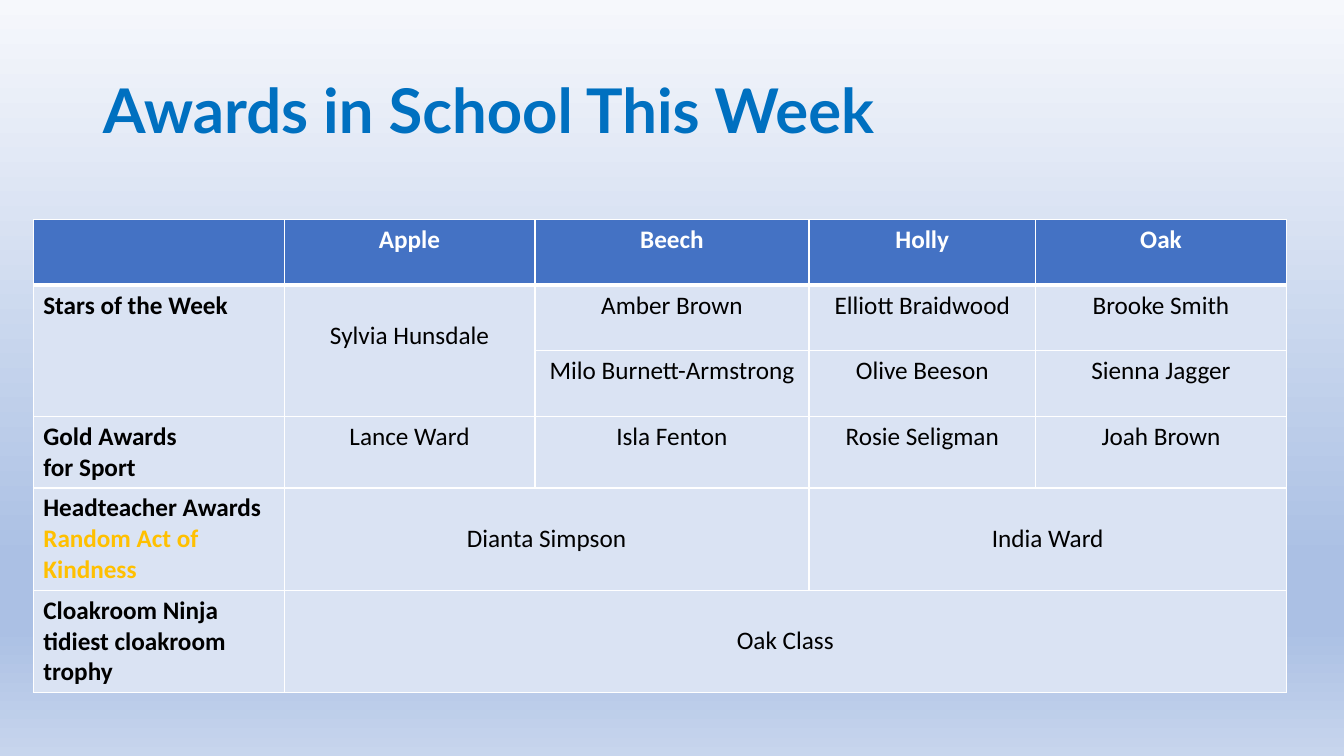
from lxml import etree
from pptx import Presentation
from pptx.dml.color import RGBColor
from pptx.enum.text import MSO_ANCHOR, MSO_AUTO_SIZE, PP_ALIGN
from pptx.oxml.ns import qn
from pptx.util import Inches, Pt

LEFT, CENTER = PP_ALIGN.LEFT, PP_ALIGN.CENTER
MIDDLE, NO_FIT = MSO_ANCHOR.MIDDLE, MSO_AUTO_SIZE.NONE

WHITE = RGBColor(0xFF, 0xFF, 0xFF)
BLACK = RGBColor(0, 0, 0)
TITLE_BLUE = RGBColor(0x00, 0x70, 0xC0)
HEADER_BLUE = RGBColor(0x44, 0x72, 0xC4)
PALE_BLUE = RGBColor(0xDA, 0xE3, 0xF3)
GOLD = RGBColor(0xFF, 0xC0, 0x00)
SKY_PALE = RGBColor(0xF6, 0xF8, 0xFC)
SKY_DEEP = RGBColor(0xAB, 0xC0, 0xE4)
SKY_LOW = RGBColor(0xC7, 0xD5, 0xED)
SKY_STOPS = [(0, SKY_PALE), (74, SKY_DEEP), (83, SKY_DEEP), (100, SKY_LOW)]

COL_WIDTHS = [2.49, 2.49, 2.72, 2.25, 2.49]
ROW_HEIGHT = 0.65
LINE_DROP = 0.35
KINDNESS = "Random Act of Kindness"
AWARDS = [
    ["", "Apple", "Beech", "Holly", "Oak"],
    ["Stars of the Week", "Sylvia Hunsdale", "Amber Brown", "Elliott Braidwood", "Brooke Smith"],
    ["", "", "Milo Burnett-Armstrong", "Olive Beeson", "Sienna Jagger"],
    ["Gold Awards\nfor Sport", "Lance Ward", "Isla Fenton", "Rosie Seligman", "Joah Brown"],
    ["Headteacher Awards ", "Dianta Simpson", "", "India Ward", ""],
    ["Cloakroom Ninja tidiest cloakroom trophy", "Oak Class", "", "", ""],
]
MERGES = [(1, 0, 2, 0), (1, 1, 2, 1), (4, 1, 4, 2), (4, 3, 4, 4), (5, 1, 5, 4)]


def add_solid(parent, color):
    """Append a solid fill of the given colour to an XML element."""
    fill = etree.SubElement(parent, qn("a:solidFill"))
    etree.SubElement(fill, qn("a:srgbClr"), val=str(color))


def style_run(r, font, size, color, bold):
    """Format one run of text."""
    r.font.name, r.font.size, r.font.bold = font, Pt(size), bold
    r.font.color.rgb = color


def paint_background(s):
    """Fill the slide with a vertical gradient."""
    fill = s.background.fill
    fill.gradient()
    fill.gradient_angle = 270
    stops = next(s.background._cSld.iter(qn("a:gsLst")))
    for stop in list(stops):
        stops.remove(stop)
    for share, color in SKY_STOPS:
        stop = etree.SubElement(stops, qn("a:gs"), pos=str(share * 1000))
        etree.SubElement(stop, qn("a:srgbClr"), val=str(color))


def add_title(s, text, left, top, width, height):
    """Place and format the title placeholder."""
    sp = s.shapes.title
    sp.left, sp.top, sp.width, sp.height = map(Inches, (left, top, width, height))
    tf = sp.text_frame
    tf.text = text
    tf.auto_size, tf.vertical_anchor = NO_FIT, MIDDLE
    p = tf.paragraphs[0]
    p.alignment, p.line_spacing = LEFT, 0.9
    style_run(p.runs[0], "Lato", 44, TITLE_BLUE, True)


def set_borders(cell, top, bottom):
    """Draw white cell borders, with top and bottom widths in points."""
    tcPr = cell._tc.get_or_add_tcPr()
    sides = [("a:lnL", 1), ("a:lnR", 1), ("a:lnT", top), ("a:lnB", bottom)]
    for i, (tag, width) in enumerate(sides):
        ln = etree.Element(qn(tag), w=str(Pt(width)))
        add_solid(ln, WHITE)
        tcPr.insert(i, ln)


def style_cell(cell, row, col):
    """Format one award cell by its place in the table."""
    cell.fill.solid()
    cell.fill.fore_color.rgb = PALE_BLUE if row else HEADER_BLUE
    set_borders(cell, 3 if row == 1 else 1, 1 if row else 3)
    for p in cell.text_frame.paragraphs:
        p.alignment = CENTER if col else LEFT
        for r in p.runs:
            style_run(r, "Calibri", 18, BLACK if row else WHITE, row == 0 or col == 0)


def add_awards(s, left, top, width, height):
    """Add the awards table, with merged cells for shared awards."""
    frame = s.shapes.add_table(len(AWARDS), len(COL_WIDTHS),
                               *map(Inches, (left, top, width, height)))
    table = frame.table
    table.horz_banding = False
    for column, share in zip(table.columns, COL_WIDTHS):
        column.width = Inches(width * share / sum(COL_WIDTHS))
    for row in table.rows:
        row.height = Inches(ROW_HEIGHT)
    frame.height = Inches(height)
    for i, names in enumerate(AWARDS):
        for j, name in enumerate(names):
            cell = table.cell(i, j)
            if name:
                cell.text_frame.text = name
            style_cell(cell, i, j)
    for r1, c1, r2, c2 in MERGES:
        cell = table.cell(r1, c1)
        cell.merge(table.cell(r2, c2))
        if c1:
            cell.margin_top = Inches(LINE_DROP)
    r = table.cell(4, 0).text_frame.paragraphs[0].add_run()
    r.text = KINDNESS
    style_run(r, "Calibri", 18, GOLD, True)


def main():
    """Build the awards slide and save it."""
    prs = Presentation()
    prs.slide_width, prs.slide_height = Inches(13.33), Inches(7.5)
    s = prs.slides.add_slide(prs.slide_layouts[5])
    paint_background(s)
    add_title(s, "Awards in School This Week", 0.92, 0.4, 11.5, 1.45)
    add_awards(s, 0.33, 2.18, 12.43, 4.65)
    prs.save("out.pptx")


if __name__ == "__main__":
    main()
